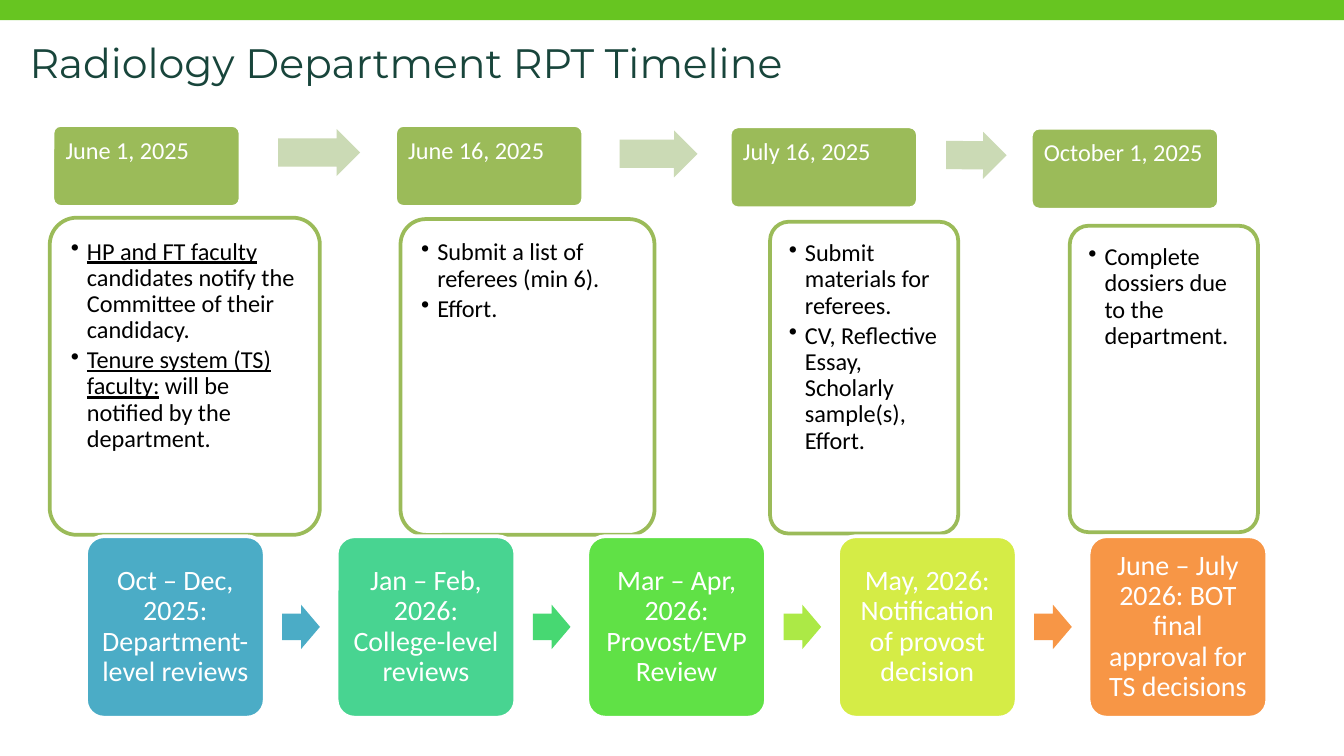
from lxml.etree import SubElement
from pptx import Presentation
from pptx.dml.color import RGBColor
from pptx.enum.shapes import MSO_SHAPE
from pptx.enum.text import MSO_ANCHOR, PP_ALIGN
from pptx.oxml.ns import qn
from pptx.util import Inches, Pt

WHITE, BLACK = "FFFFFF", "000000"
GREEN, OLIVE, PALE, TITLE_COLOR = "67C521", "9BBB59", "CBDAB5", "18453B"

# Content: each bullet is a list of (text, underlined) spans
TITLE = "Radiology Department RPT Timeline"
MILESTONES = [
    dict(date="June 1, 2025", header=(0.39, 0.93), card=(0.37, 1.62, 2.01, 2.36),
         arrow=(2.07, 0.96, 0.61, 0.35), turn=0.1,
         bullets=[[("HP and FT faculty ", True),
                   ("candidates notify the Committee of their candidacy.", False)],
                  [("Tenure system (TS) faculty:", True),
                   (" will be notified by the department.", False)]]),
    dict(date="June 16, 2025", header=(2.94, 0.93), card=(2.98, 1.63, 1.89, 2.35),
         arrow=(4.61, 0.97, 0.58, 0.35), turn=0.2,
         bullets=[[("Submit a list of referees (min 6).", False)],
                  [("Effort.", False)]]),
    dict(date="July 16, 2025", header=(5.43, 0.94), card=(5.73, 1.65, 1.4, 2.32),
         arrow=(7.04, 0.98, 0.45, 0.35), turn=0.3,
         bullets=[[("Submit materials for referees.", False)],
                  [("CV, Reflective Essay, Scholarly sample(s), Effort.", False)]]),
    dict(date="October 1, 2025", header=(7.67, 0.95), card=(7.96, 1.68, 1.4, 2.28),
         arrow=None, turn=0,
         bullets=[[("Complete dossiers due to the department.", False)]]),
]
# Review stages: text, box colour, colour of the arrow that follows
STAGES = [
    ("Oct – Dec, 2025: Department-level reviews", "4BACC6", "4BACC6"),
    ("Jan – Feb, 2026: College-level reviews", "48D491", "47D872"),
    ("Mar – Apr, 2026: Provost/EVP Review", "60E146", "ACE946"),
    ("May, 2026: Notification of provost decision", "D5EC46", "F79646"),
    ("June – July 2026: BOT final approval for TS decisions", "F79646", None),
]
STAGE_LEFT, STAGE_RIGHT, STAGE_TOP = 0.64, 9.43, 3.99
STAGE_WIDTH, STAGE_HEIGHT = 1.33, 1.35
STAGE_PITCH = (STAGE_RIGHT - STAGE_LEFT - STAGE_WIDTH) / (len(STAGES) - 1)


def color(value):
    return RGBColor.from_string(value)


def add_box(page, kind, place, fill, line=None, opacity=None):
    box = page.shapes.add_shape(kind, *[Inches(value) for value in place])
    box.shadow.inherit = False
    box.fill.solid()
    box.fill.fore_color.rgb = color(fill)
    if opacity:
        fill_color = box.fill._xPr.find(qn("a:solidFill"))[0]
        SubElement(fill_color, qn("a:alpha"), val=str(opacity * 1000))
    if line:
        box.line.color.rgb = color(line)
        box.line.width = Pt(2)
    else:
        box.line.fill.background()
    if kind == MSO_SHAPE.ROUNDED_RECTANGLE:
        box.adjustments[0] = 0.1
    return box


def add_arrow(page, place, fill, turn=0):
    arrow = add_box(page, MSO_SHAPE.RIGHT_ARROW, place, fill)
    arrow.adjustments[0], arrow.adjustments[1] = 0.6, 0.5
    arrow.rotation = turn


def set_frame(box, margin, anchor):
    frame = box.text_frame
    frame.word_wrap = True
    frame.vertical_anchor = anchor
    frame.margin_left = frame.margin_right = Inches(margin)
    frame.margin_top = frame.margin_bottom = Inches(margin)
    return frame


def write(para, text, size=13, font="Calibri", ink=WHITE, underline=None,
          align=PP_ALIGN.LEFT, spacing=0.9):
    para.alignment = align
    para.line_spacing = spacing
    span = para.add_run()
    span.text = text
    span.font.size = Pt(size)
    span.font.name = font
    span.font.color.rgb = color(ink)
    span.font.underline = underline


def add_bullet(para):
    properties = para._p.get_or_add_pPr()
    properties.set("marL", str(Inches(0.12)))
    properties.set("indent", str(-Inches(0.12)))
    para.line_spacing = 0.9
    para.space_after = Pt(2)
    SubElement(properties, qn("a:buChar"), char="•")
    para.font.size = Pt(13)


def add_milestone(page, item):
    header = add_box(page, MSO_SHAPE.ROUNDED_RECTANGLE,
                     (*item["header"], 1.4, 0.61), OLIVE, WHITE)
    write(set_frame(header, 0.08, MSO_ANCHOR.TOP).paragraphs[0], item["date"])

    card = add_box(page, MSO_SHAPE.ROUNDED_RECTANGLE, item["card"], WHITE, OLIVE, 90)
    frame = set_frame(card, 0.1, MSO_ANCHOR.TOP)
    for number, bullet in enumerate(item["bullets"]):
        para = frame.add_paragraph() if number else frame.paragraphs[0]
        add_bullet(para)
        for text, underlined in bullet:
            write(para, text, ink=BLACK, underline=underlined)

    if item["arrow"]:
        add_arrow(page, item["arrow"], PALE, item["turn"])


def add_stage(page, number, text, fill, arrow_fill):
    left = STAGE_LEFT + number * STAGE_PITCH
    box = add_box(page, MSO_SHAPE.ROUNDED_RECTANGLE,
                  (left, STAGE_TOP, STAGE_WIDTH, STAGE_HEIGHT), fill, WHITE)
    para = set_frame(box, 0.06, MSO_ANCHOR.MIDDLE).paragraphs[0]
    write(para, text, size=15, align=PP_ALIGN.CENTER)
    if arrow_fill:
        add_arrow(page, (left + 1.46, STAGE_TOP + 0.51, 0.28, 0.33), arrow_fill)


def main():
    deck = Presentation()
    deck.slide_width = Inches(10)
    deck.slide_height = deck.slide_width * 9 // 16
    page = deck.slides.add_slide(deck.slide_layouts[5])

    # Top band and title
    add_box(page, MSO_SHAPE.RECTANGLE, (0, 0, 10, 0.15), GREEN)
    title = page.shapes.title
    title.left, title.top = Inches(0.12), Inches(0.23)
    title.width, title.height = Inches(6.58), Inches(0.59)
    frame = set_frame(title, 0.1, MSO_ANCHOR.TOP)
    frame.margin_top = frame.margin_bottom = Inches(0.05)
    write(frame.paragraphs[0], TITLE, size=22, font="Montserrat",
          ink=TITLE_COLOR, spacing=1.0)

    # Dated milestones, then the row of review stages
    for item in MILESTONES:
        add_milestone(page, item)
    for number, stage in enumerate(STAGES):
        add_stage(page, number, *stage)

    deck.save("out.pptx")


if __name__ == "__main__":
    main()
